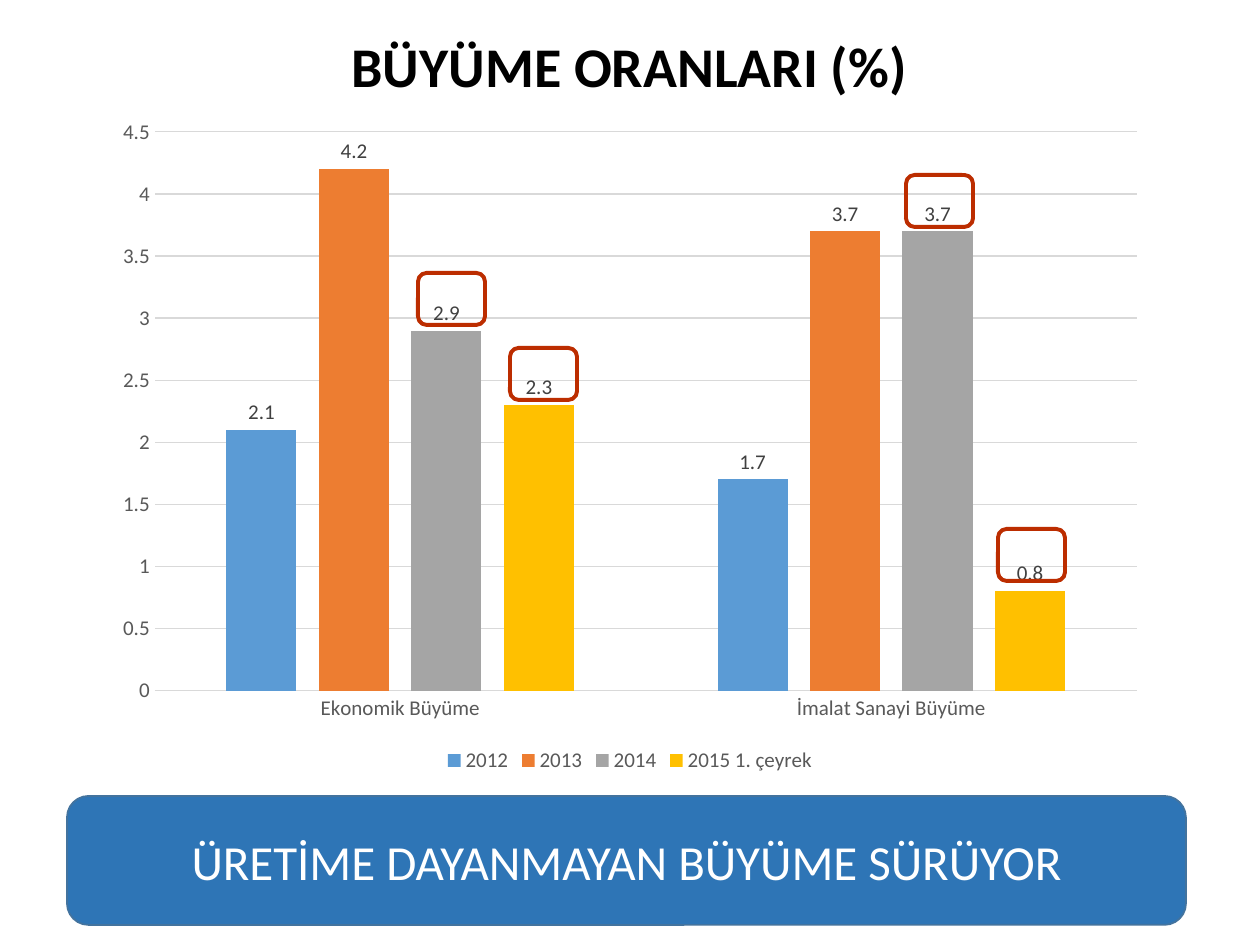
from pptx import Presentation
from pptx.chart.data import CategoryChartData
from pptx.dml.color import RGBColor
from pptx.enum.chart import XL_CHART_TYPE, XL_LABEL_POSITION, XL_LEGEND_POSITION, XL_TICK_MARK
from pptx.enum.shapes import MSO_SHAPE
from pptx.enum.text import MSO_ANCHOR, PP_ALIGN
from pptx.util import Emu, Pt

COLUMN = XL_CHART_TYPE.COLUMN_CLUSTERED
OUTSIDE = XL_LABEL_POSITION.OUTSIDE_END
BOTTOM = XL_LEGEND_POSITION.BOTTOM
NO_TICK = XL_TICK_MARK.NONE
ROUND = MSO_SHAPE.ROUNDED_RECTANGLE
MIDDLE = MSO_ANCHOR.MIDDLE
CENTER = PP_ALIGN.CENTER

SCALE = 914400 / 126
TITLE_ONLY = 5
GROUPS = ["Ekonomik Büyüme", "İmalat Sanayi Büyüme"]
YEARS = [
    ("2012", (2.1, 1.7), "5B9BD5", "General"),
    ("2013", (4.2, 3.7), "ED7D31", "#,##0.0"),
    ("2014", (2.9, 3.7), "A5A5A5", "#,##0.0"),
    ("2015 1. çeyrek", (2.3, 0.8), "FFC000", "General"),
]
MARKS = [(418, 273), (906, 175), (510, 348), (998, 529)]


def px(num):
    return Emu(round(num * SCALE))


def paint(color):
    return RGBColor.from_string(color)


def style(font, size, color, bold=False):
    font.name = "Calibri"
    font.size = Pt(size)
    font.bold = bold
    font.color.rgb = paint(color)


def write(shape, text, size=18, color="000000", bold=False, align=CENTER):
    frame = shape.text_frame
    frame.word_wrap = True
    frame.vertical_anchor = MIDDLE
    para = frame.paragraphs[0]
    para.alignment = align
    run = para.add_run()
    run.text = text
    style(run.font, size, color, bold)


class Page:
    ink = "595959"
    rule = "D9D9D9"
    small = 12

    def __init__(self, deck):
        self.slide = deck.slides.add_slide(deck.slide_layouts[TITLE_ONLY])

    def title(self, text, x, y, w, h):
        shape = self.slide.shapes.title
        shape.left, shape.top, shape.width, shape.height = map(px, (x, y, w, h))
        write(shape, text, size=32, bold=True)

    def box(self, x, y, w, h, line, width, fill=None):
        shape = self.slide.shapes.add_shape(ROUND, *map(px, (x, y, w, h)))
        shape.shadow.inherit = False
        if fill:
            shape.fill.solid()
            shape.fill.fore_color.rgb = paint(fill)
        else:
            shape.fill.background()
        shape.line.color.rgb = paint(line)
        shape.line.width = Pt(width)
        return shape

    def hair(self, line):
        line.color.rgb = paint(self.rule)
        line.width = Pt(0.75)

    def chart(self, x, y, w, h):
        data = CategoryChartData()
        data.categories = GROUPS
        for name, vals, _, _ in YEARS:
            data.add_series(name, vals)
        frame = self.slide.shapes.add_chart(COLUMN, *map(px, (x, y, w, h)), data)
        chart = frame.chart
        style(chart.font, 10, "000000")
        chart.has_title = False
        chart.has_legend = True
        chart.legend.position = BOTTOM
        chart.legend.include_in_layout = False
        style(chart.legend.font, self.small, self.ink)
        self.axes(chart)
        self.bars(chart.plots[0])

    def axes(self, chart):
        cat, val = chart.category_axis, chart.value_axis
        for axis in (cat, val):
            axis.major_tick_mark = axis.minor_tick_mark = NO_TICK
            style(axis.tick_labels.font, self.small, self.ink)
        self.hair(cat.format.line)
        val.format.line.fill.background()
        self.hair(val.major_gridlines.format.line)
        val.minimum_scale, val.maximum_scale, val.major_unit = 0, 4.5, 0.5

    def bars(self, plot):
        plot.gap_width, plot.overlap = 205, -32
        plot.vary_by_categories = False
        for bar, (_, _, color, form) in zip(plot.series, YEARS):
            bar.format.fill.solid()
            bar.format.fill.fore_color.rgb = paint(color)
            tags = bar.data_labels
            tags.show_value = True
            tags.position = OUTSIDE
            tags.number_format = form
            tags.number_format_is_linked = False
            style(tags.font, self.small, "404040")


def main():
    deck = Presentation()
    deck.slide_width, deck.slide_height = px(1260), px(945)
    page = Page(deck)
    banner = page.box(67, 796, 1119, 129, "43739E", 1, fill="2E75B6")
    write(banner, "ÜRETİME DAYANMAYAN BÜYÜME SÜRÜYOR", size=28, color="FFFFFF")
    page.title("BÜYÜME ORANLARI (%)", 244, 25, 771, 81)
    page.chart(102, 106, 1056, 672)
    for x, y in MARKS:
        page.box(x, y, 67, 52, "BC2D00", 2.25)
    deck.save("out.pptx")


if __name__ == "__main__":
    main()
